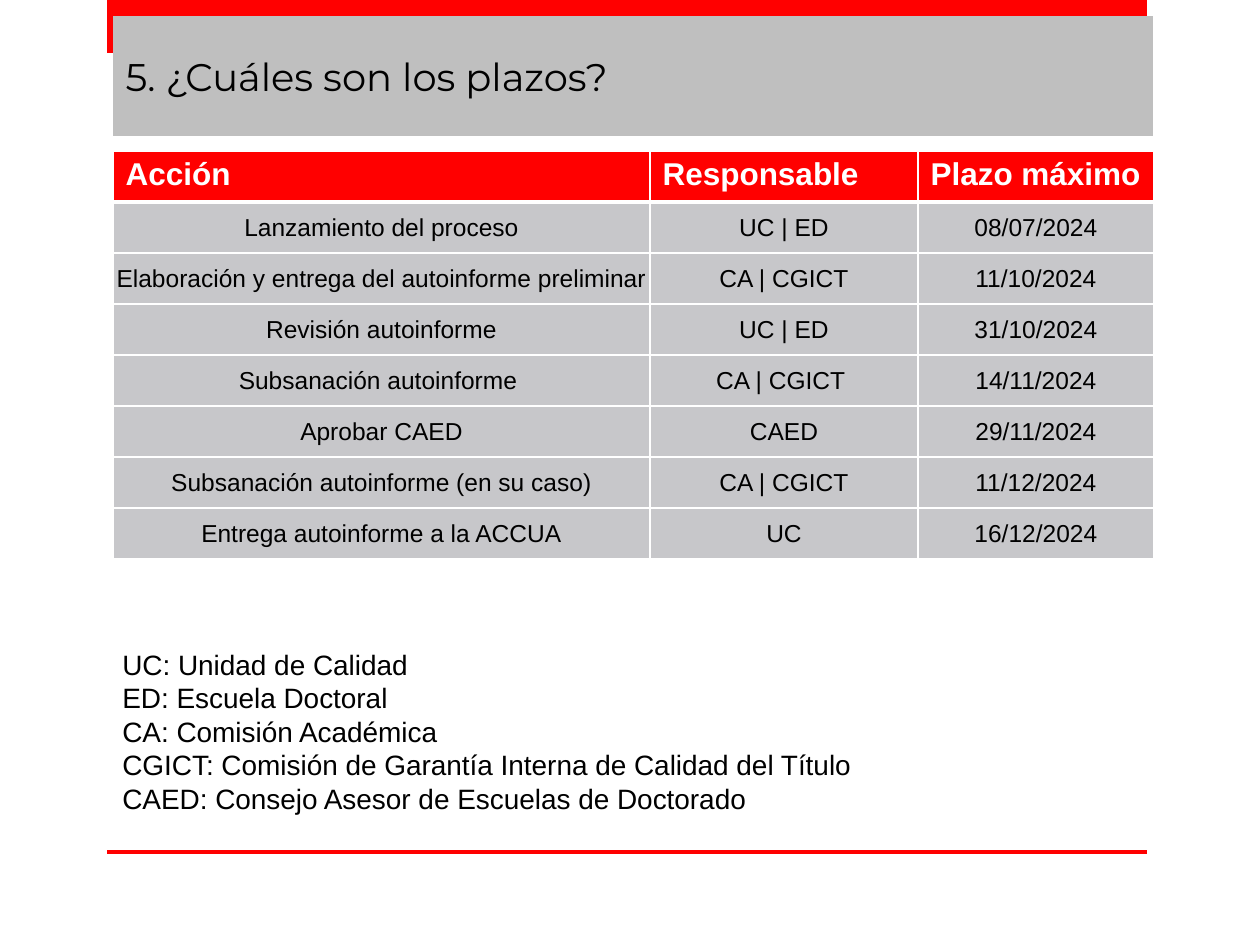
import pptx
import pptx.util
import pptx.dml.color
import pptx.enum.shapes
import pptx.enum.text
import pptx.oxml.ns
from lxml import etree

SCALE = 914400 / 126  # EMU in one px
COLORS = {"red": "FF0000", "band": "BFBFBF", "cell": "C7C7CA",
          "white": "FFFFFF", "black": "000000"}
ALIGN = pptx.enum.text.PP_ALIGN
MIDDLE = pptx.enum.text.MSO_ANCHOR.MIDDLE

HEAD = ("Acción", "Responsable", "Plazo máximo")
ROWS = (
    ("Lanzamiento del proceso", "UC | ED", "08/07/2024"),
    ("Elaboración y entrega del autoinforme preliminar", "CA | CGICT", "11/10/2024"),
    ("Revisión autoinforme", "UC | ED", "31/10/2024"),
    ("Subsanación autoinforme ", "CA | CGICT ", "14/11/2024"),
    ("Aprobar CAED", "CAED", "29/11/2024"),
    ("Subsanación autoinforme (en su caso)", "CA | CGICT", "11/12/2024"),
    ("Entrega autoinforme a la ACCUA", "UC", "16/12/2024"),
)
TERMS = (
    "UC: Unidad de Calidad",
    "ED: Escuela Doctoral",
    "CA: Comisión Académica",
    "CGICT: Comisión de Garantía Interna de Calidad del Título",
    "CAED: Consejo Asesor de Escuelas de Doctorado",
)


def px(n):
    return pptx.util.Emu(round(n * SCALE))


def rgb(name):
    return pptx.dml.color.RGBColor.from_string(COLORS[name])


def paint(fill, color):
    fill.solid()
    fill.fore_color.rgb = rgb(color)


def style(para, size, color="black", face="Arial", bold=False, align=ALIGN.LEFT):
    para.alignment = align
    font = para.font
    font.name, font.size, font.bold = face, pptx.util.Pt(size), bold
    font.color.rgb = rgb(color)


def add_frame(slide, box):
    """Red bars at the top and bottom of the box, behind the title."""
    x, y, w, h = box
    for top, high in ((y, 53), (y + h - 4, 4)):
        bar = slide.shapes.add_shape(pptx.enum.shapes.MSO_SHAPE.RECTANGLE,
                                     px(x), px(top), px(w), px(high))
        bar.shadow.inherit = False
        paint(bar.fill, "red")
        bar.line.fill.background()
        slide.shapes.title.element.addprevious(bar.element)


def add_title(slide, box, text):
    title = slide.shapes.title
    title.left, title.top, title.width, title.height = map(px, box)
    paint(title.fill, "band")
    frame = title.text_frame
    frame.text = text
    frame.word_wrap = True
    frame.auto_size = pptx.enum.text.MSO_AUTO_SIZE.NONE
    frame.vertical_anchor = MIDDLE
    style(frame.paragraphs[0], 22, face="Montserrat", align=ALIGN.JUSTIFY)


def add_edges(cell, top, base):
    """White cell borders, with top and bottom edges of the given widths."""
    props = cell._tc.get_or_add_tcPr()
    for side, width in (("L", 1), ("R", 1), ("T", top), ("B", base)):
        line = etree.SubElement(props, pptx.oxml.ns.qn("a:ln" + side),
                                w=str(pptx.util.Pt(width)))
        fill = etree.SubElement(line, pptx.oxml.ns.qn("a:solidFill"))
        etree.SubElement(fill, pptx.oxml.ns.qn("a:srgbClr"), val=COLORS["white"])


def add_dates(slide, box, widths):
    x, y, w, h = box
    data = (HEAD,) + ROWS
    table = slide.shapes.add_table(len(data), len(HEAD),
                                   px(x), px(y), px(w), px(h)).table
    for col, width in zip(table.columns, widths):
        col.width = px(width)
    for r, texts in enumerate(data):
        table.rows[r].height = px(h // len(data))
        for c, text in enumerate(texts):
            cell = table.cell(r, c)
            cell.text = text
            para = cell.text_frame.paragraphs[0]
            # A heavier rule parts the header from the first row
            add_edges(cell, 3 if r == 1 else 1, 3 if r == 0 else 1)
            if r == 0:
                paint(cell.fill, "red")
                style(para, 18, "white", bold=True)
                cell.margin_right = px(6)
                continue
            paint(cell.fill, "cell")
            style(para, 14, align=ALIGN.CENTER)
            cell.vertical_anchor = MIDDLE
            cell.margin_left = cell.margin_right = cell.margin_top = px(1)
            cell.margin_bottom = 0


def add_terms(slide, box):
    frame = slide.shapes.add_textbox(*map(px, box)).text_frame
    frame.word_wrap = True
    frame.text = "\n".join(TERMS)
    for para in frame.paragraphs:
        style(para, 16)


def main():
    deck = pptx.Presentation()
    deck.slide_width, deck.slide_height = px(1260), px(945)
    slide = deck.slides.add_slide(deck.slide_layouts[5])
    add_frame(slide, (107, 0, 1040, 854))
    add_title(slide, (113, 16, 1040, 120), "5. ¿Cuáles son los plazos?")
    add_dates(slide, (113, 151, 1041, 408), (537, 268, 236))
    add_terms(slide, (110, 641, 883, 183))
    deck.save("out.pptx")


if __name__ == "__main__":
    main()
